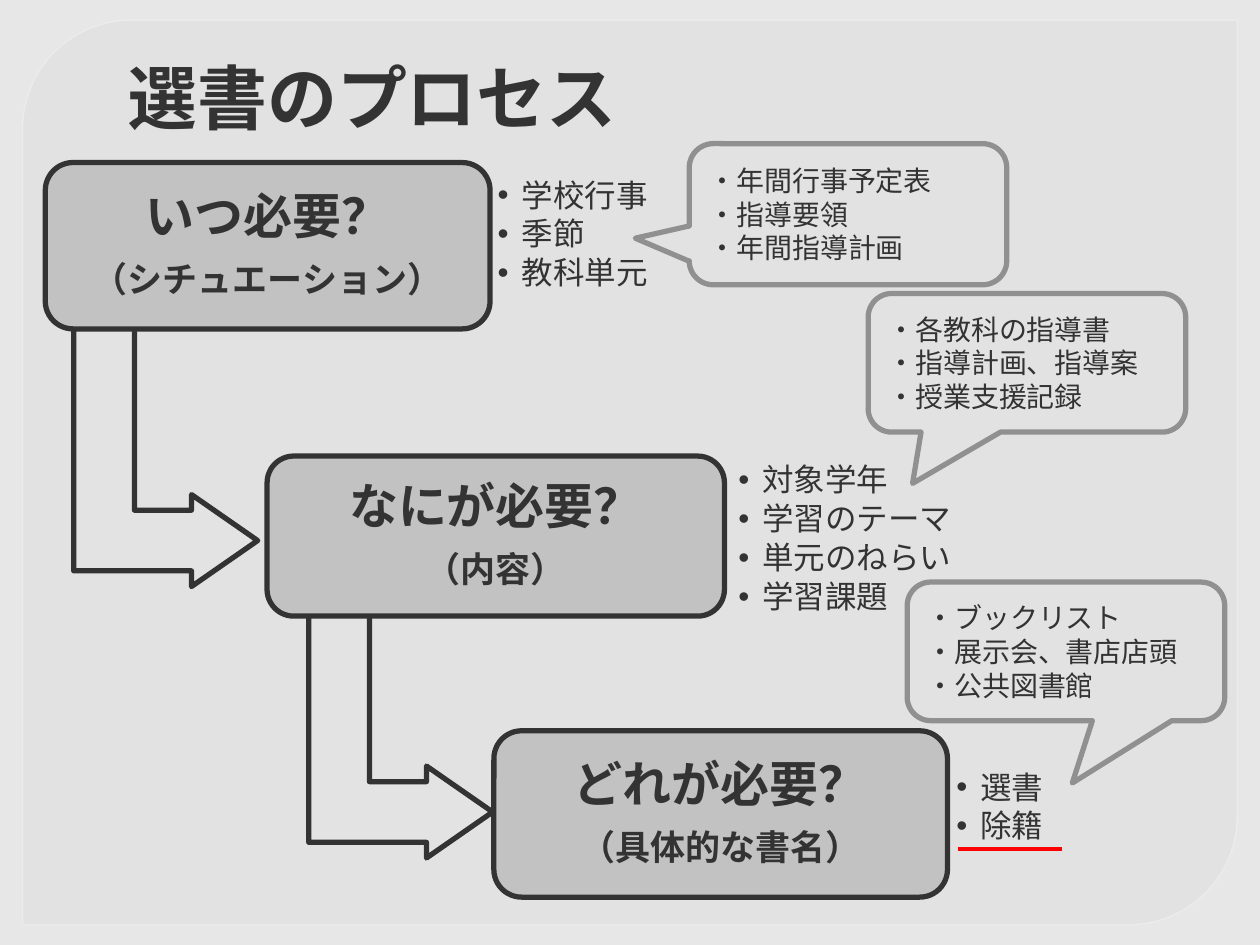
"""Build the slide on the steps of choosing books."""
from dataclasses import dataclass

from lxml.etree import SubElement as Sub
from pptx import Presentation
from pptx.dml.color import RGBColor
from pptx.enum.shapes import MSO_CONNECTOR as Link, MSO_SHAPE as Kind
from pptx.enum.text import MSO_ANCHOR as Anchor, MSO_AUTO_SIZE as Fit, PP_ALIGN as Align
from pptx.oxml.ns import qn
from pptx.shapes.autoshape import Shape
from pptx.slide import Slide
from pptx.text.text import TextFrame
from pptx.util import Inches, Pt

BACK = RGBColor(0xE7, 0xE7, 0xE7)
PANEL = RGBColor(0xE0, 0xE0, 0xE0)
EDGE = RGBColor(0xED, 0xED, 0xED)
PALE = RGBColor(0xE3, 0xE3, 0xE3)
GREY = RGBColor(0xC2, 0xC2, 0xC2)
MID = RGBColor(0x90, 0x90, 0x90)
DARK = RGBColor(0x33, 0x33, 0x33)
RED = RGBColor(0xFF, 0x00, 0x00)
FONT = "Roboto"

Area = tuple[float, float, float, float]


@dataclass
class Step:
    area: Area
    head: str
    sub: str
    side: Area
    items: list[str]


@dataclass
class Note:
    area: Area
    tip: tuple[float, float]
    lines: list[str]


STEPS = [
    Step((0.36, 1.29, 3.53, 1.32), "いつ必要？", "（シチュエーション）",
         (3.88, 1.41, 1.52, 0.92), ["学校行事", "季節", "教科単元"]),
    Step((2.12, 3.62, 3.63, 1.27), "なにが必要？", "（内容）",
         (5.79, 3.67, 2.28, 1.23), ["対象学年", "学習のテーマ", "単元のねらい", "学習課題"]),
    Step((3.92, 5.8, 3.6, 1.32), "どれが必要？", "（具体的な書名）",
         (7.52, 5.8, 0.91, 1.23), ["選書", "除籍"]),
]
ARROWS = [(0.27, 2.88, 2.09, 1.46), (2.2, 5.1, 1.96, 1.46)]
NOTES = [
    Note((5.47, 1.14, 2.52, 1.12), (-0.67, 0.17), ["年間行事予定表", "指導要領", "年間指導計画"]),
    Note((7.2, 4.62, 2.52, 1.1), (0.02, 0.95), ["ブックリスト", "展示会、書店店頭", "公共図書館"]),
    Note((6.89, 2.33, 2.52, 1.1), (-0.36, 0.87), ["各教科の指導書", "指導計画、指導案", "授業支援記録"]),
]


def place(shape: Shape, area: Area) -> None:
    """Move and size a shape in inches."""
    shape.left, shape.top, shape.width, shape.height = map(Inches, area)


def draw(slide: Slide, kind: Kind, area: Area, fill: RGBColor | None,
         line: RGBColor, width: float = 3) -> Shape:
    """Add a preset shape with its fill and line."""
    shape = slide.shapes.add_shape(kind, *map(Inches, area))
    shape.shadow.inherit = False
    if fill is None:
        shape.fill.background()
    else:
        shape.fill.solid()
        shape.fill.fore_color.rgb = fill
    shape.line.color.rgb = line
    shape.line.width = Pt(width)
    return shape


def write(frame: TextFrame, lines: list[str], sizes: list[int], bold: bool = False,
          align: Align = Align.LEFT, font: str = FONT, pad: float = 0.1,
          space: float = 1, after: float = 0, anchor: Anchor = Anchor.MIDDLE) -> None:
    """Fill a frame with lines and format their runs."""
    frame.text = "\n".join(lines)
    frame.word_wrap = True
    frame.auto_size = Fit.NONE
    frame.vertical_anchor = anchor
    frame.margin_left = frame.margin_right = Inches(pad)
    frame.margin_top = frame.margin_bottom = Inches(min(pad, 0.07))
    for para, size in zip(frame.paragraphs, sizes):
        para.alignment = align
        para.line_spacing = space
        para.space_before = Pt(0)
        para.space_after = Pt(size * after)
        for run in para.runs:
            run.font.name = font
            run.font.size = Pt(size)
            run.font.bold = bold
            run.font.color.rgb = DARK


def dot(frame: TextFrame) -> None:
    """Give each paragraph a hanging bullet."""
    for para in frame.paragraphs:
        props = para._p.get_or_add_pPr()
        props.set("marL", str(Inches(0.19)))
        props.set("indent", str(-Inches(0.19)))
        Sub(props, qn("a:buFont"), typeface="Arial")
        Sub(props, qn("a:buChar"), char="•")


def panel(slide: Slide) -> None:
    """Draw the see-through panel behind all else."""
    shape = draw(slide, Kind.ROUND_2_DIAG_RECTANGLE, (0.18, 0.16, 9.64, 7.18), PANEL, EDGE, 0.87)
    shape.adjustments[0], shape.adjustments[1] = 0.12, 0
    for tint, part in zip(shape._element.spPr.iter(qn("a:srgbClr")), (65, 88)):
        Sub(tint, qn("a:alpha"), val=str(part * 1000))
    slide.shapes._spTree.insert(2, shape._element)


def arrow(slide: Slide, area: Area) -> None:
    """Draw a bent arrow that leads down to the next step."""
    shape = draw(slide, Kind.BENT_UP_ARROW, area, PALE, DARK)
    shape.rotation = 90
    for slot, value in enumerate((0.33, 0.25, 0.36)):
        shape.adjustments[slot] = value


def stage(slide: Slide, step: Step, body: Shape) -> None:
    """Draw a step box and its list."""
    box = draw(slide, Kind.ROUNDED_RECTANGLE, step.area, GREY, DARK)
    write(box.text_frame, [step.head, step.sub], [28, 20], True, Align.CENTER,
          pad=0.18, space=0.9, after=0.35)
    place(body, step.side)
    write(body.text_frame, step.items, [18] * len(step.items), pad=0.07, space=0.9, after=0.15)
    dot(body.text_frame)


def bubble(slide: Slide, note: Note) -> None:
    """Draw a callout with its lines."""
    shape = draw(slide, Kind.ROUNDED_RECTANGULAR_CALLOUT, note.area, None, MID)
    for slot, value in enumerate((*note.tip, 0.17)):
        shape.adjustments[slot] = value
    write(shape.text_frame, [f"・{line}" for line in note.lines], [16] * len(note.lines))


def main() -> None:
    """Build and save the slide."""
    deck = Presentation()
    deck.slide_width, deck.slide_height = Inches(10), Inches(7.5)
    slide = deck.slides.add_slide(deck.slide_layouts[4])
    slide.background.fill.solid()
    slide.background.fill.fore_color.rgb = BACK
    title, *bodies = slide.placeholders
    spare = bodies.pop()
    spare._element.getparent().remove(spare._element)

    panel(slide)
    place(title, (0.91, 0.36, 4.65, 0.77))
    write(title.text_frame, ["選書のプロセス"], [40], True, font="Arial", anchor=Anchor.TOP)
    for area in ARROWS:
        arrow(slide, area)
    for step, body in zip(STEPS, bodies):
        stage(slide, step, body)
    for note in NOTES:
        bubble(slide, note)

    rule = slide.shapes.add_connector(Link.STRAIGHT, *map(Inches, (7.6, 6.74, 8.43, 6.74)))
    rule.line.color.rgb = RED
    rule.line.width = Pt(2)
    Sub(rule._element.spPr, qn("a:effectLst"))
    deck.save("out.pptx")


if __name__ == "__main__":
    main()
